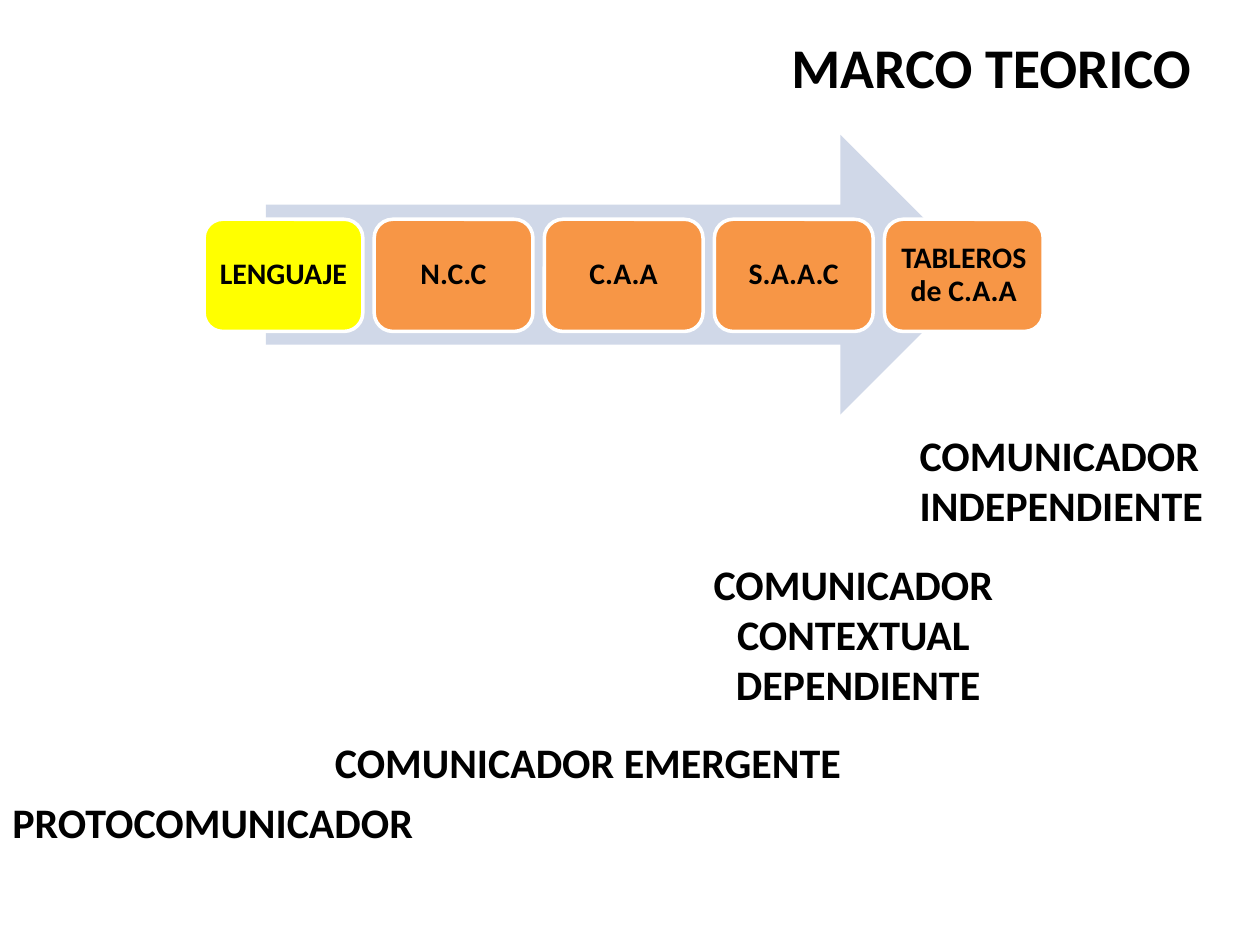
from pptx import Presentation
from pptx.dml.color import RGBColor
from pptx.enum.shapes import MSO_SHAPE as Shape
from pptx.enum.text import MSO_ANCHOR as Anchor, MSO_AUTO_SIZE as AutoSize, PP_ALIGN as Align
from pptx.util import Inches, Pt

TITLE_ONLY = 5
STAGES = ["LENGUAJE", "N.C.C", "C.A.A", "S.A.A.C", "TABLEROS de C.A.A"]
STAGE_LEFT, STAGE_PITCH = 1.62, 1.35
COMMUNICATORS = [
    (["PROTOCOMUNICADOR"], (0, 6.27, 3.41, 0.5), Align.LEFT),
    (["COMUNICADOR EMERGENTE"], (2.56, 5.8, 4.26, 0.5), Align.LEFT),
    (["COMUNICADOR ", "CONTEXTUAL ", "DEPENDIENTE"], (5.55, 4.38, 2.52, 1.31), Align.CENTER),
    (["COMUNICADOR", "INDEPENDIENTE"], (7.2, 3.36, 2.52, 0.91), Align.LEFT),
]


def color(hex_value):
    return RGBColor.from_string(hex_value)


def set_all(target, values):
    for name, value in values.items():
        setattr(target, name, value)


def write(frame, lines, size, align, line_spacing=1.0):
    """Fill a text frame with bold black paragraphs, one per line."""
    frame.text = "\n".join(lines)
    for paragraph in frame.paragraphs:
        set_all(paragraph, {"alignment": align, "line_spacing": line_spacing})
        set_all(paragraph.font, {"name": "Calibri", "size": Pt(size), "bold": True})
        paragraph.font.color.rgb = color("000000")


def add_title(slide, text):
    title = slide.shapes.title
    set_all(title, {"left": Inches(6.18), "top": Inches(0.21),
                    "width": Inches(3.46), "height": Inches(0.64)})
    write(title.text_frame, [text], 32, Align.LEFT)
    set_all(title.text_frame, {"vertical_anchor": Anchor.TOP, "word_wrap": True,
                               "auto_size": AutoSize.NONE})


def add_filled(slide, kind, box, fill):
    shape = slide.shapes.add_shape(kind, *map(Inches, box))
    shape.shadow.inherit = False
    shape.fill.solid()
    shape.fill.fore_color.rgb = color(fill)
    shape.line.fill.background()
    return shape


def add_stage(slide, text, left, fill):
    stage = add_filled(slide, Shape.ROUNDED_RECTANGLE, (left, 1.74, 1.26, 0.89), fill)
    stage.line.color.rgb = color("FFFFFF")
    stage.line.width = Pt(2)
    frame = stage.text_frame
    margins = {f"margin_{side}": Inches(0.03) for side in ("left", "top", "right", "bottom")}
    set_all(frame, {**margins, "word_wrap": True, "vertical_anchor": Anchor.MIDDLE})
    write(frame, [text], 17, Align.CENTER, 0.9)


def add_communicator(slide, lines, box, align):
    frame = slide.shapes.add_textbox(*map(Inches, box)).text_frame
    set_all(frame, {"word_wrap": False, "auto_size": AutoSize.SHAPE_TO_FIT_TEXT})
    write(frame, lines, 24, align)


def main():
    deck = Presentation()
    set_all(deck, {"slide_width": Inches(10), "slide_height": Inches(7.5)})
    slide = deck.slides.add_slide(deck.slide_layouts[TITLE_ONLY])
    add_title(slide, "MARCO TEORICO")
    add_filled(slide, Shape.RIGHT_ARROW, (2.11, 1.07, 5.67, 2.22), "D0D8E8")
    for index, stage in enumerate(STAGES):
        fill = "F79646" if index else "FFFF00"
        add_stage(slide, stage, STAGE_LEFT + index * STAGE_PITCH, fill)
    for lines, box, align in COMMUNICATORS:
        add_communicator(slide, lines, box, align)
    deck.save("out.pptx")


if __name__ == "__main__":
    main()
